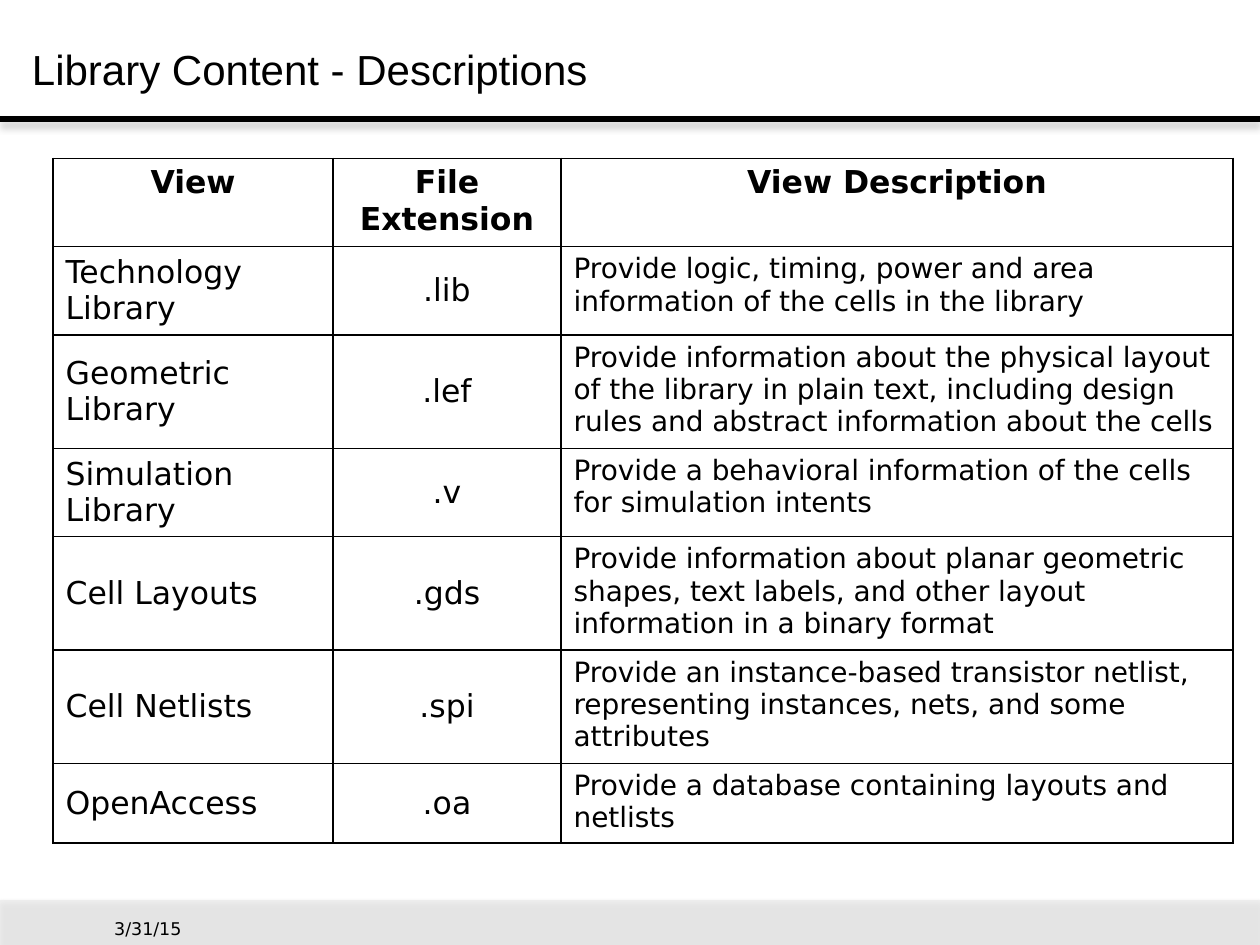
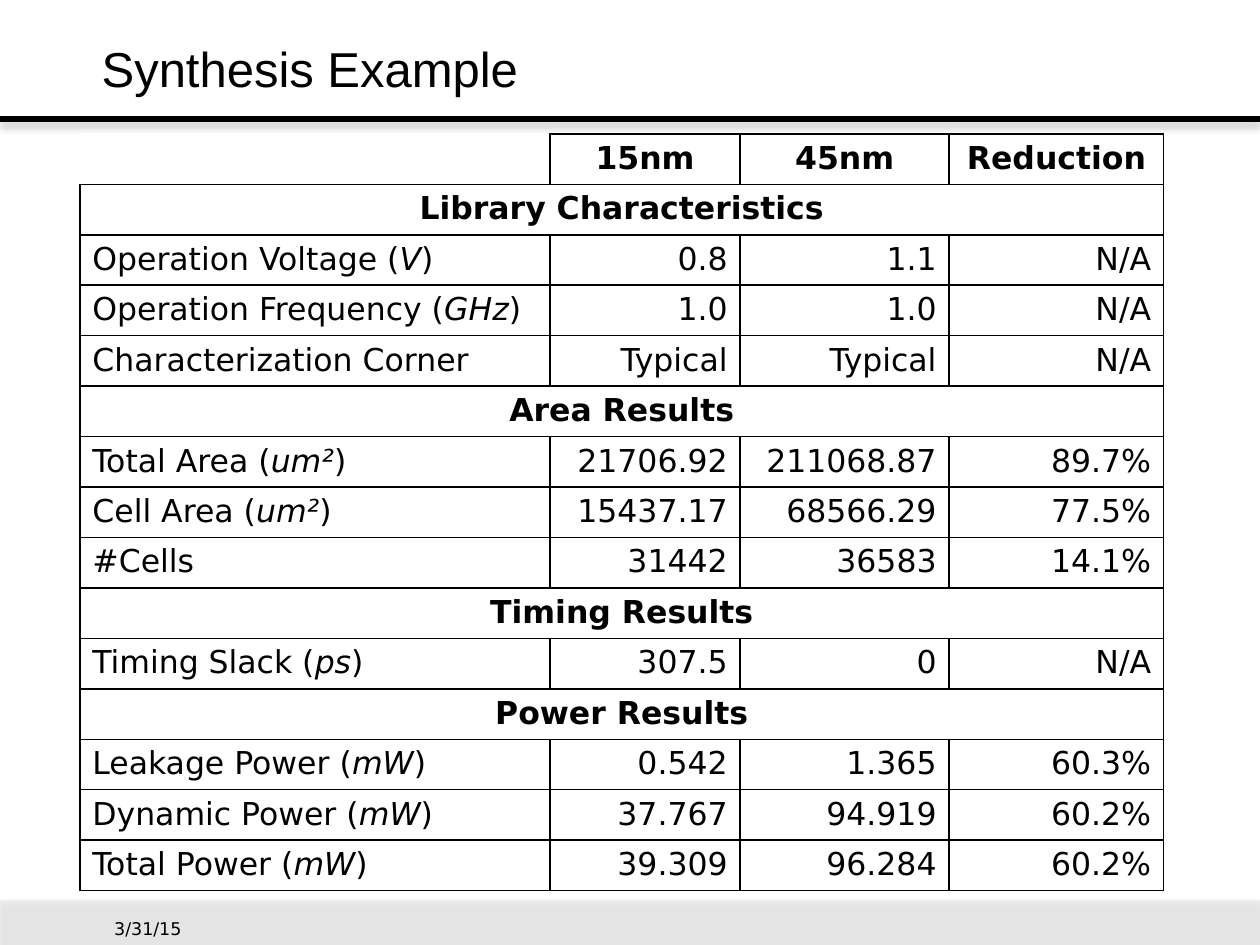
"""Build two slides on standard cell libraries: view descriptions and a synthesis comparison."""
from lxml import etree
from pptx import Presentation
from pptx.dml.color import RGBColor
from pptx.enum.shapes import MSO_CONNECTOR, MSO_SHAPE
from pptx.enum.text import MSO_ANCHOR, MSO_AUTO_SIZE, PP_ALIGN
from pptx.oxml import parse_xml
from pptx.oxml.ns import nsdecls, qn
from pptx.util import Pt

LEFT, CENTER, RIGHT = PP_ALIGN.LEFT, PP_ALIGN.CENTER, PP_ALIGN.RIGHT
TOP, MIDDLE, BOTTOM = MSO_ANCHOR.TOP, MSO_ANCHOR.MIDDLE, MSO_ANCHOR.BOTTOM
RECTANGLE, STRAIGHT = MSO_SHAPE.RECTANGLE, MSO_CONNECTOR.STRAIGHT
NO_AUTOFIT = MSO_AUTO_SIZE.NONE

BLACK, WHITE, BAND_GREY, SHADOW_GREY = "000000", "FFFFFF", "E8E8E8", "808080"
TITLE_FONT, BODY_FONT = "Arial", "DejaVu Sans"
SLIDE_WIDTH, SLIDE_HEIGHT = 720, 540
BAND_TOP, BAND_HEIGHT = 514.2, 25.8
RULE_TOP = 68


def rgb(hex_color):
    return RGBColor.from_string(hex_color)


def add_shadow(shape, opacity, blur, distance):
    shape._element.spPr.append(parse_xml(
        f'<a:effectLst {nsdecls("a")}><a:outerShdw blurRad="{Pt(blur)}" dist="{Pt(distance)}" '
        f'dir="5400000" rotWithShape="0"><a:srgbClr val="{SHADOW_GREY}">'
        f'<a:alpha val="{opacity * 1000}"/></a:srgbClr></a:outerShdw></a:effectLst>'))


library_views = {
    "title": "Library Content - Descriptions", "title_size": 24,
    "left": 30.3, "top": 90.5,
    "columns": [160, 130.3, 384],
    "heights": [32.4] + [29.5] * 6,
    "aligns": [LEFT, CENTER, LEFT],
    "anchors": [MIDDLE, MIDDLE, TOP],
    "sizes": [18, 18, 16],
    "rows": [
        ["View", "File Extension", "View Description"],
        ["Technology Library", ".lib",
         "Provide logic, timing, power and area information of the cells in the library"],
        ["Geometric Library", ".lef",
         "Provide information about the physical layout of the library in plain text, "
         "including design rules and abstract information about the cells"],
        ["Simulation Library", ".v",
         "Provide a behavioral information of the cells for simulation intents"],
        ["Cell Layouts", ".gds",
         "Provide information about planar geometric shapes, text labels, and other layout "
         "information in a binary format"],
        ["Cell Netlists", ".spi",
         "Provide an instance-based transistor netlist, representing instances, nets, "
         "and some attributes"],
        ["OpenAccess", ".oa", "Provide a database containing layouts and netlists"],
    ],
}
synthesis_results = {
    "title": "Synthesis Example", "title_size": 28,
    "left": 45.6, "top": 76.5,
    "columns": [268.6, 108.8, 119.4, 122.6],
    "heights": [15.8] * 15,
    "aligns": [LEFT, RIGHT, RIGHT, RIGHT],
    "anchors": [TOP] * 4,
    "sizes": [18] * 4,
    "rows": [
        ["", "15nm", "45nm", "Reduction"],
        ["Library Characteristics"],
        ["Operation Voltage (*V*)", "0.8", "1.1", "N/A"],
        ["Operation Frequency (*GHz*)", "1.0", "1.0", "N/A"],
        ["Characterization Corner", "Typical", "Typical", "N/A"],
        ["Area Results"],
        ["Total Area (*um²*)", "21706.92", "211068.87", "89.7%"],
        ["Cell Area (*um²*)", "15437.17", "68566.29", "77.5%"],
        ["#Cells", "31442", "36583", "14.1%"],
        ["Timing Results"],
        ["Timing Slack (*ps*)", "307.5", "0", "N/A"],
        ["Power Results"],
        ["Leakage Power (*mW*)", "0.542", "1.365", "60.3%"],
        ["Dynamic Power (*mW*)", "37.767", "94.919", "60.2%"],
        ["Total Power (*mW*)", "39.309", "96.284", "60.2%"],
    ],
}

prs = Presentation()
prs.slide_width, prs.slide_height = Pt(SLIDE_WIDTH), Pt(SLIDE_HEIGHT)
title_only = prs.slide_layouts[5]

for content in (library_views, synthesis_results):
    slide = prs.slides.add_slide(title_only)

    footer_band = slide.shapes.add_shape(
        RECTANGLE, 0, Pt(BAND_TOP), Pt(SLIDE_WIDTH), Pt(BAND_HEIGHT))
    footer_band.fill.solid()
    footer_band.fill.fore_color.rgb = rgb(BAND_GREY)
    band_color = footer_band._element.spPr.find(".//" + qn("a:srgbClr"))
    etree.SubElement(band_color, qn("a:alpha"), val="63000")
    footer_band.line.fill.background()
    add_shadow(footer_band, 38, 3.1, 1.6)

    date_box = slide.shapes.add_textbox(Pt(42.5), Pt(BAND_TOP), Pt(84), Pt(BAND_HEIGHT))
    date_box.text_frame.word_wrap = False
    date_box.text_frame.vertical_anchor = BOTTOM
    date = date_box.text_frame.paragraphs[0]
    date.text = "3/31/15"
    date.alignment = CENTER
    date.font.size, date.font.name = Pt(10), BODY_FONT
    date.font.color.rgb = rgb(BLACK)

    title_rule = slide.shapes.add_connector(
        STRAIGHT, 0, Pt(RULE_TOP), Pt(SLIDE_WIDTH), Pt(RULE_TOP))
    title_rule.line.color.rgb = rgb(BLACK)
    title_rule.line.width = Pt(3.5)
    add_shadow(title_rule, 40, 4, 3)

    title = slide.shapes.title
    title.left, title.top, title.width, title.height = 0, Pt(12), Pt(354), Pt(54)
    title.text_frame.auto_size = NO_AUTOFIT
    title.text_frame.vertical_anchor = MIDDLE
    heading = title.text_frame.paragraphs[0]
    heading.text = content["title"]
    heading.alignment = CENTER
    heading.font.size, heading.font.name = Pt(content["title_size"]), TITLE_FONT
    heading.font.color.rgb = rgb(BLACK)

    rows, columns, heights = content["rows"], content["columns"], content["heights"]
    table = slide.shapes.add_table(
        len(rows), len(columns), Pt(content["left"]), Pt(content["top"]),
        Pt(sum(columns)), Pt(sum(heights))).table
    table.first_row = table.horz_banding = False
    for column, width in zip(table.columns, columns):
        column.width = Pt(width)

    for r, (texts, height) in enumerate(zip(rows, heights)):
        table.rows[r].height = Pt(height)
        is_section = len(texts) == 1
        is_heading = r == 0 or is_section
        if is_section:
            table.cell(r, 0).merge(table.cell(r, len(columns) - 1))

        for c in range(len(columns)):
            cell = table.cell(r, c)
            is_blank_corner = r == c == 0 and not texts[0]
            for side in "RB" if is_blank_corner else "LRTB":
                cell._tc.get_or_add_tcPr().append(parse_xml(
                    f'<a:ln{side} {nsdecls("a")} w="{Pt(1)}"><a:solidFill>'
                    f'<a:srgbClr val="{BLACK}"/></a:solidFill></a:ln{side}>'))
            cell.fill.solid()
            cell.fill.fore_color.rgb = rgb(WHITE)
            if c >= len(texts):
                continue

            cell.vertical_anchor = TOP if is_heading else content["anchors"][c]
            entry = cell.text_frame.paragraphs[0]
            entry.alignment = CENTER if is_heading else content["aligns"][c]
            entry.font.size = Pt(18 if is_heading else content["sizes"][c])
            entry.font.name, entry.font.bold = BODY_FONT, is_heading
            entry.font.color.rgb = rgb(BLACK)
            if texts[c]:
                for i, part in enumerate(texts[c].split("*")):
                    run = entry.add_run()
                    run.text = part
                    if i % 2:
                        run.font.italic = True

prs.save("out.pptx")
